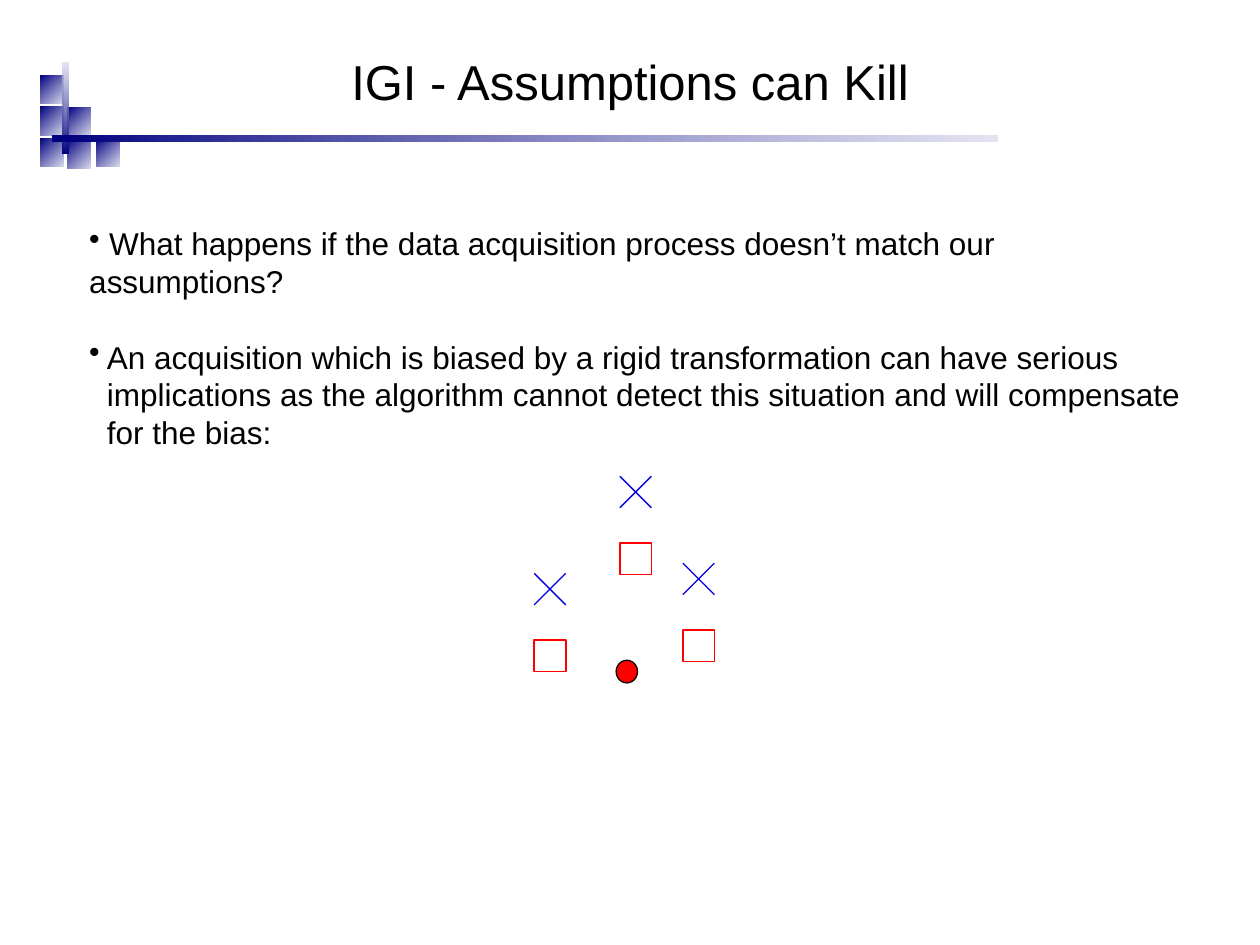
import pptx
import pptx.util
import pptx.dml.color
import pptx.enum.shapes
import pptx.enum.text
import pptx.oxml.ns
import lxml.etree

Inches = pptx.util.Inches
Pt = pptx.util.Pt
RGB = pptx.dml.color.RGBColor.from_string
MSO_SHAPE = pptx.enum.shapes.MSO_SHAPE
qn = pptx.oxml.ns.qn

COLORS = {"navy": "000080", "pale": "D8D8EC", "red": "FF0000",
          "blue": "0000E1", "black": "000000"}
FONT = "Arial"

presentation = pptx.Presentation()
presentation.slide_width = Inches(10)
presentation.slide_height = Inches(7.5)
slide = presentation.slides.add_slide(presentation.slide_layouts[5])


def add_shape(kind, left, top, width, height):
    shape = slide.shapes.add_shape(
        kind, Inches(left), Inches(top), Inches(width), Inches(height))
    shape.shadow.inherit = False
    return shape


def add_gradient_bar(left, top, width, height, rotation, angle, stops):
    """Draw a borderless bar; stops are (colour name, opacity in percent)."""
    shape = add_shape(MSO_SHAPE.RECTANGLE, left, top, width, height)
    shape.rotation = rotation
    shape.line.fill.background()
    shape.fill.gradient()
    shape.fill.gradient_angle = angle
    for stop, (color, _) in zip(shape.fill.gradient_stops, stops):
        stop.color.rgb = RGB(COLORS[color])
    for color_element, (_, opacity) in zip(shape._element.iter(qn("a:srgbClr")), stops):
        if opacity < 100:
            alpha = lxml.etree.SubElement(color_element, qn("a:alpha"))
            alpha.set("val", str(opacity * 1000))


# Corner ornament: six squares and two fading rules
for left, top in [(0.3, 1.12), (0.51, 1.13), (0.74, 1.12),
                  (0.3, 0.87), (0.51, 0.88), (0.3, 0.62)]:
    add_gradient_bar(left, top, 0.23, 0.18, 270, 45, [("pale", 91), ("navy", 100)])
for left, top, width, rotation in [(0.16, 0.84, 0.72, 270), (0.42, 1.08, 7.5, 0)]:
    add_gradient_bar(left, top, width, 0.04, rotation, 0, [("navy", 100), ("pale", 71)])

# Title
title = slide.shapes.title
title.left, title.top = Inches(0.5), Inches(0.17)
title.width, title.height = Inches(9), Inches(0.95)
title.text_frame.text = "IGI - Assumptions can Kill"
title.text_frame.vertical_anchor = pptx.enum.text.MSO_ANCHOR.MIDDLE
paragraph = title.text_frame.paragraphs[0]
paragraph.alignment = pptx.enum.text.PP_ALIGN.CENTER
paragraph.font.size = Pt(28)
paragraph.font.name = FONT
paragraph.font.color.rgb = RGB(COLORS["black"])

# Target point
target = add_shape(MSO_SHAPE.OVAL, 4.89, 5.24, 0.17, 0.18)
target.fill.solid()
target.fill.fore_color.rgb = RGB(COLORS["red"])
target.line.color.rgb = RGB(COLORS["black"])
target.line.width = Pt(0.75)

# Fiducials: each square has a cross shifted up by the same bias
marker_size = 0.25
bias = 0.53
for left, top in [(4.24, 5.08), (4.92, 4.31), (5.42, 5)]:
    square = add_shape(MSO_SHAPE.RECTANGLE, left, top, marker_size, marker_size)
    square.fill.background()
    square.line.color.rgb = RGB(COLORS["red"])
    square.line.width = Pt(1)

    cross_top = top - bias
    cross_bottom = cross_top + marker_size
    for start_y, end_y in [(cross_top, cross_bottom), (cross_bottom, cross_top)]:
        stroke = slide.shapes.add_connector(
            pptx.enum.shapes.MSO_CONNECTOR.STRAIGHT,
            Inches(left), Inches(start_y), Inches(left + marker_size), Inches(end_y))
        stroke.line.color.rgb = RGB(COLORS["blue"])
        stroke.line.width = Pt(0.75)
        lxml.etree.SubElement(stroke._element.spPr, qn("a:effectLst"))

# Bulleted text: (text, hanging indent, space before in points)
bullets = [
    (" What happens if the data acquisition process doesn’t match our assumptions?", 0, 0),
    ("An acquisition which is biased by a rigid transformation can have serious\v"
     "implications as the algorithm cannot detect this situation and will compensate\v"
     "for the bias:", 0.14, 21.6),
]
text_box = slide.shapes.add_textbox(Inches(0.61), Inches(1.73), Inches(8.95), Inches(1.6))
text_frame = text_box.text_frame
text_frame.word_wrap = True
for index, (text, indent, space_before) in enumerate(bullets):
    paragraph = text_frame.paragraphs[0] if index == 0 else text_frame.add_paragraph()
    paragraph.text = text
    properties = paragraph._p.get_or_add_pPr()
    properties.set("marL", str(Inches(indent)))
    properties.set("indent", str(-Inches(indent)))
    bullet = lxml.etree.SubElement(properties, qn("a:buChar"))
    bullet.set("char", "•")
    paragraph.space_before = Pt(space_before)
    paragraph.line_spacing = Pt(21.6)
    paragraph.font.size = Pt(18)
    paragraph.font.name = FONT
    paragraph.font.color.rgb = RGB(COLORS["black"])

presentation.save("out.pptx")
